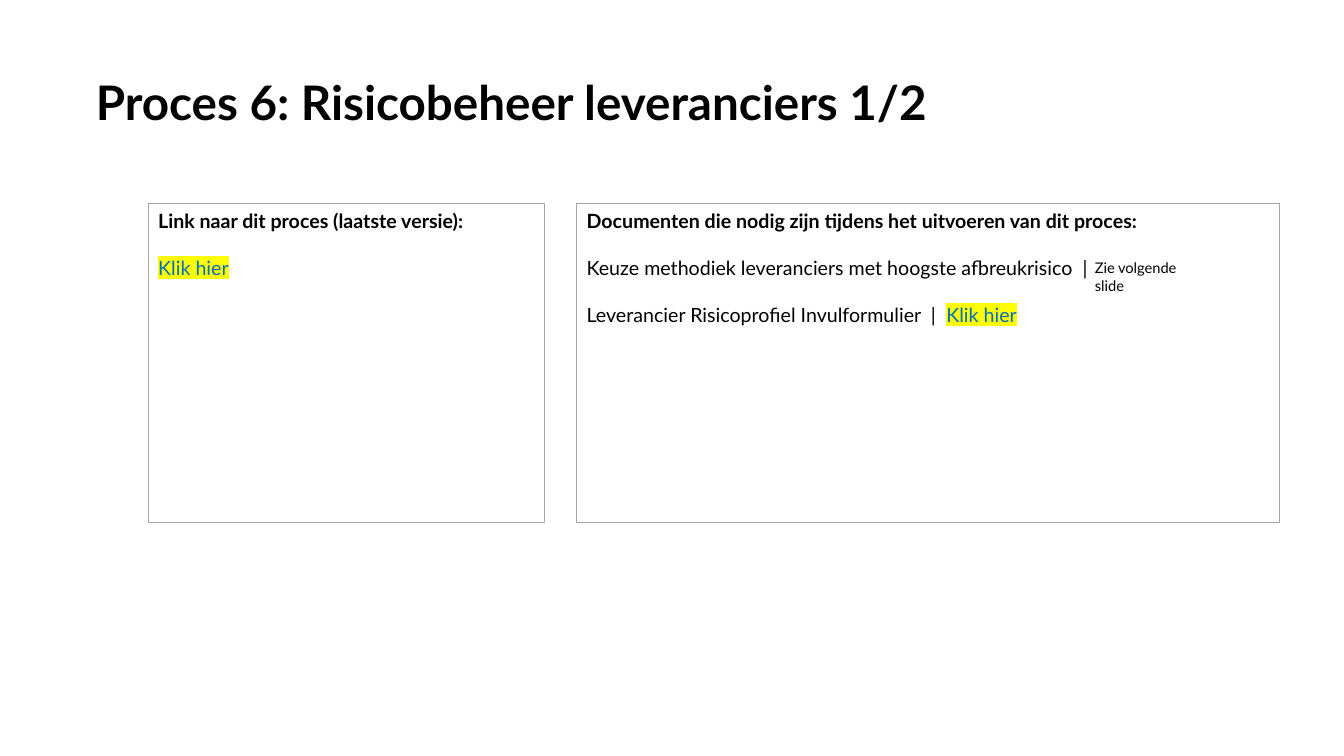
from dataclasses import dataclass

from lxml.etree import SubElement
from pptx import Presentation
from pptx.dml.color import RGBColor as Rgb
from pptx.enum.shapes import MSO_SHAPE as Kind
from pptx.enum.text import MSO_ANCHOR as Anchor, PP_ALIGN as Align
from pptx.oxml.ns import qn
from pptx.slide import Slide
from pptx.text.text import TextFrame as Frame
from pptx.util import Inches, Pt

WIDE, HIGH = Inches(13.33), Inches(7.5)


@dataclass(frozen=True)
class Theme:
    font: str = "Lato"
    ink: str = "000000"
    edge: str = "A6A6A6"
    link: str = "0070C0"
    mark: str = "FFFF00"
    head: float = 34
    body: float = 14
    note: float = 10.5
    gap: float = 16.8


@dataclass(frozen=True)
class Area:
    """Left, top, width and height in percent of the slide."""
    left: float
    top: float
    width: float
    height: float

    def rect(self) -> tuple[int, int, int, int]:
        return (int(WIDE * self.left / 100), int(HIGH * self.top / 100),
                int(WIDE * self.width / 100), int(HIGH * self.height / 100))


@dataclass(frozen=True)
class Line:
    text: str = ""
    link: str = ""
    bold: bool = False


@dataclass(frozen=True)
class Panel:
    area: Area
    lines: tuple[Line, ...]


THEME = Theme()
TITLE = Area(7.13, 10.53, 87, 4.93)
NOTE = Area(80.72, 33.6, 9.98, 3.73)
PANELS = (
    Panel(Area(11.03, 26.93, 29.48, 42.13), (
        Line("Link naar dit proces (laatste versie):", bold=True),
        Line(link="Klik hier"),
    )),
    Panel(Area(42.91, 26.93, 52.29, 42.13), (
        Line("Documenten die nodig zijn tijdens het uitvoeren van dit proces:", bold=True),
        Line("Keuze methodiek leveranciers met hoogste afbreukrisico  |"),
        Line("Leverancier Risicoprofiel Invulformulier  |  ", "Klik hier"),
    )),
)


def write(frame: Frame, lines: tuple[Line, ...], size: float, lead: float = 1) -> None:
    frame.word_wrap = True
    frame.vertical_anchor = Anchor.TOP
    for i, line in enumerate(lines):
        para = frame.paragraphs[0] if i == 0 else frame.add_paragraph()
        para.alignment = Align.LEFT
        para.line_spacing = lead
        if i:
            para.space_before = Pt(THEME.gap)
        font = para.font
        font.name, font.size, font.bold = THEME.font, Pt(size), line.bold
        for text, tint in ((line.text, THEME.ink), (line.link, THEME.link)):
            if not text:
                continue
            run = para.add_run()
            run.text = text
            run.font.color.rgb = Rgb.from_string(tint)
            if text == line.link:
                glow = SubElement(run.font._element, qn("a:highlight"))
                SubElement(glow, qn("a:srgbClr"), val=THEME.mark)


def label(slide: Slide, area: Area, text: Line, size: float,
          lead: float = 1, flush: bool = False) -> None:
    frame = slide.shapes.add_textbox(*area.rect()).text_frame
    if flush:
        frame.margin_left = frame.margin_right = 0
        frame.margin_top = frame.margin_bottom = 0
    write(frame, (text,), size, lead)


def draw(slide: Slide, panel: Panel) -> None:
    box = slide.shapes.add_shape(Kind.RECTANGLE, *panel.area.rect())
    box.shadow.inherit = False
    box.fill.background()
    box.line.color.rgb = Rgb.from_string(THEME.edge)
    box.line.width = Pt(0.75)
    write(box.text_frame, panel.lines, THEME.body)


def main() -> None:
    deck = Presentation()
    deck.slide_width, deck.slide_height = WIDE, HIGH
    slide = deck.slides.add_slide(deck.slide_layouts[6])

    # Title
    label(slide, TITLE, Line("Proces 6: Risicobeheer leveranciers 1/2", bold=True),
          THEME.head, 0.9, flush=True)
    # Link and document panels
    for panel in PANELS:
        draw(slide, panel)
    # Remark beside the first document
    label(slide, NOTE, Line("Zie volgende slide"), THEME.note)

    deck.save("out.pptx")


if __name__ == "__main__":
    main()
